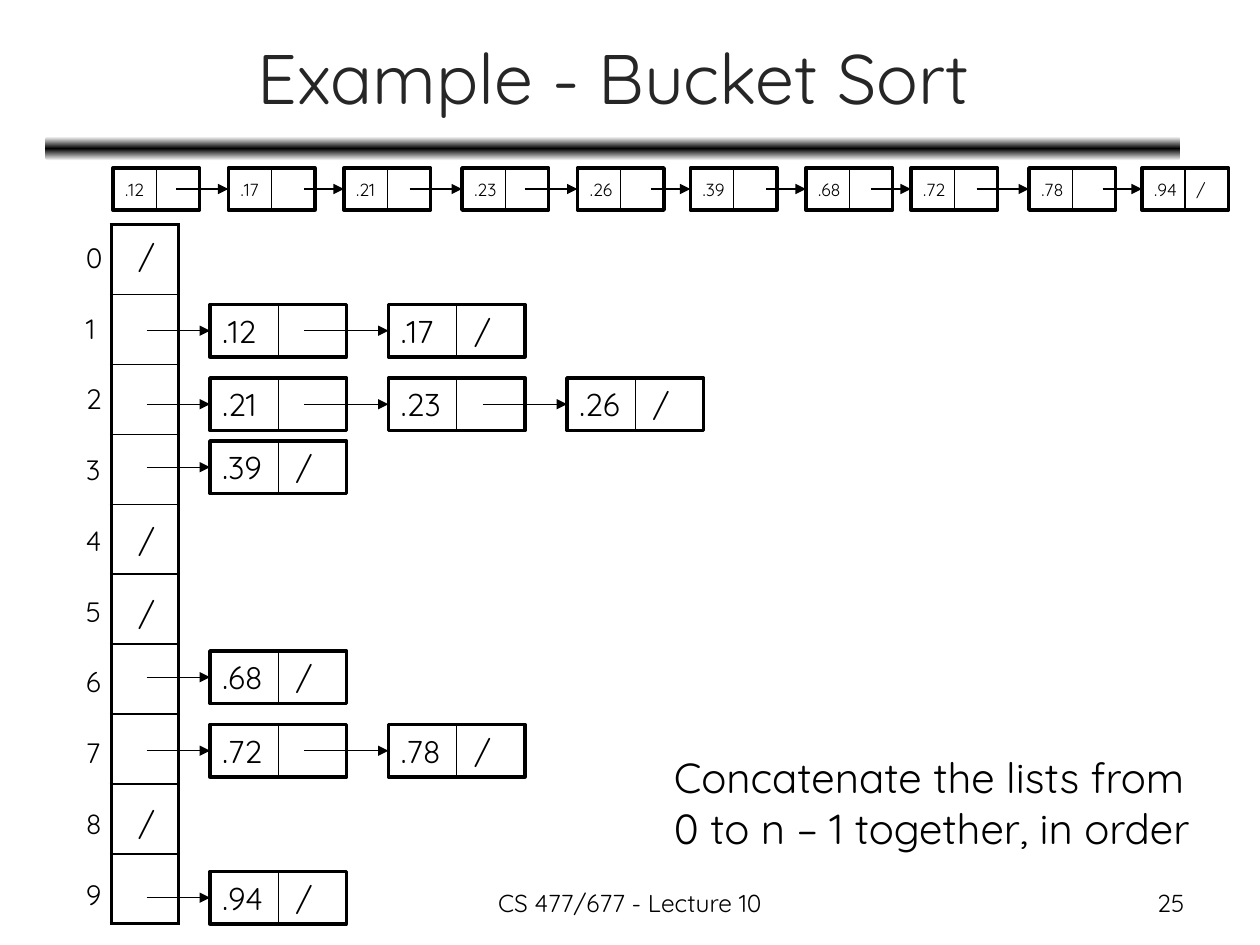
from copy import deepcopy
from dataclasses import dataclass

import lxml.etree
import pptx
import pptx.dml.color
import pptx.enum.shapes
import pptx.enum.text
import pptx.oxml.ns
import pptx.util

qn = pptx.oxml.ns.qn
Pt = pptx.util.Pt
Align = pptx.enum.text.PP_ALIGN
Anchor = pptx.enum.text.MSO_ANCHOR
Shape = pptx.enum.shapes.MSO_SHAPE


@dataclass(frozen=True)
class Theme:
    font: str = "Quicksand"
    ink: str = "000000"
    paper: str = "FFFFFF"
    heading: str = "262626"
    title: int = 40
    remark: int = 24
    key: int = 18
    index: int = 16
    footer: int = 14
    small_key: int = 10
    thin: float = 0.75
    cell: float = 1
    box: float = 2
    frame: float = 2.25


@dataclass(frozen=True)
class NodeStyle:
    """Size of a list node in grid units; nil is where its end mark starts."""
    width: float
    height: float
    size: int
    nil: float


@dataclass(frozen=True)
class Link:
    """A node of the joined list: its column and where its pointer starts."""
    key: str
    col: float
    pointer: float | None = None


@dataclass(frozen=True)
class Bucket:
    index: int
    row: float
    keys: tuple[str, ...]


THEME = Theme()
COLS, ROWS = 120, 90  # twelve grid units to the inch
BIG = NodeStyle(13, 5, THEME.key, 7)
SMALL = NodeStyle(8.25, 4, THEME.small_key, 4)

JOINED_ROW = 16
JOINED = (
    Link(".12", 10.75, 16.75), Link(".17", 21.75, 29), Link(".21", 32.75, 39),
    Link(".23", 44, 50), Link(".26", 55, 62), Link(".39", 65.75, 73),
    Link(".68", 76.75, 83), Link(".72", 86.75, 93), Link(".78", 98, 105),
    Link(".94", 108.75),
)
BUCKETS = (
    Bucket(1, 29, (".12", ".17")), Bucket(2, 36, (".21", ".23", ".26")),
    Bucket(3, 42, (".39",)), Bucket(6, 62, (".68",)),
    Bucket(7, 69, (".72", ".78")), Bucket(9, 83, (".94",)),
)
EMPTY_ROWS = (22, 49, 56, 76)
BUCKET_COUNT = 10
ARRAY_LEFT, ARRAY_TOP, ARRAY_WIDTH, ARRAY_HEIGHT = 10.6, 21.4, 6.4, 66.6
ROW_HEIGHT = ARRAY_HEIGHT / BUCKET_COUNT
FIRST_NODE, NODE_STEP, POINTER, BUCKET_POINTER = 20, 17, 9, 14

prs = pptx.Presentation()
prs.slide_width, prs.slide_height = pptx.util.Inches(10), pptx.util.Inches(7.5)
slide = prs.slides.add_slide(prs.slide_layouts[5])


def units(*lengths: float) -> list[int]:
    return [round(length * prs.slide_width / COLS) for length in lengths]


def colour(code: str) -> pptx.dml.color.RGBColor:
    return pptx.dml.color.RGBColor.from_string(code)


def write(frame, lines: tuple[str, ...], size: int, align=Align.LEFT,
          ink: str = THEME.ink, anchor=Anchor.TOP) -> None:
    frame.word_wrap = True
    frame.vertical_anchor = anchor
    frame.text = "\n".join(lines)
    for paragraph in frame.paragraphs:
        paragraph.alignment = align
        paragraph.font.name = THEME.font
        paragraph.font.size = Pt(size)
        paragraph.font.color.rgb = colour(ink)


def label(left: float, top: float, width: float, height: float, size: int,
          *lines: str, align=Align.LEFT) -> None:
    box = slide.shapes.add_textbox(*units(left, top, width, height))
    write(box.text_frame, lines, size, align)


def line(x1: float, y1: float, x2: float, y2: float, arrow: bool = False) -> None:
    connector = slide.shapes.add_connector(
        pptx.enum.shapes.MSO_CONNECTOR.STRAIGHT, *units(x1, y1, x2, y2))
    connector.line.color.rgb = colour(THEME.ink)
    connector.line.width = Pt(THEME.thin)
    if arrow:
        lxml.etree.SubElement(connector.line._get_or_add_ln(), qn("a:tailEnd"),
                              type="triangle")
    lxml.etree.SubElement(connector._element.spPr, qn("a:effectLst"))


def node(key: str, col: float, row: float, style: NodeStyle, last: bool) -> None:
    box = slide.shapes.add_shape(
        Shape.RECTANGLE, *units(col, row, style.width, style.height))
    box.shadow.inherit = False
    box.fill.background()
    box.line.color.rgb = colour(THEME.ink)
    box.line.width = Pt(THEME.box)
    write(box.text_frame, (key + "\t/" if last else key,), style.size,
          anchor=Anchor.MIDDLE)
    if last:
        properties = box.text_frame.paragraphs[0]._p.get_or_add_pPr()
        stops = lxml.etree.Element(qn("a:tabLst"))
        lxml.etree.SubElement(stops, qn("a:tab"), pos=str(units(style.nil)[0]),
                              algn="l")
        properties.insert(0, stops)
    middle = col + style.width / 2
    line(middle, row, middle, row + style.height)


def header_rule() -> None:
    """Draw the bar under the title, fading out above and below."""
    bar = slide.shapes.add_shape(Shape.ROUNDED_RECTANGLE, *units(4.3, 13, 108.1, 2.3))
    bar.shadow.inherit = False
    bar.line.fill.background()
    bar.fill.gradient()
    bar.fill.gradient_angle = 90
    edge, core = bar.fill.gradient_stops
    edge.color.rgb, core.color.rgb = colour(THEME.paper), colour(THEME.ink)
    core.position = 0.5
    stops = bar._element.spPr.find(".//" + qn("a:gsLst"))
    far_edge = deepcopy(stops[0])
    far_edge.set("pos", "100000")
    stops.append(far_edge)


def border(cell, side: str, width: float) -> None:
    edge = lxml.etree.Element(qn("a:ln" + side), w=str(Pt(width)))
    fill = lxml.etree.SubElement(edge, qn("a:solidFill"))
    lxml.etree.SubElement(fill, qn("a:srgbClr"), val=THEME.ink)
    cell._tc.get_or_add_tcPr().append(edge)


def bucket_array() -> None:
    table = slide.shapes.add_table(
        BUCKET_COUNT, 1,
        *units(ARRAY_LEFT, ARRAY_TOP, ARRAY_WIDTH, ARRAY_HEIGHT)).table
    table.first_row = table.horz_banding = False
    for i in range(BUCKET_COUNT):
        cell = table.cell(i, 0)
        border(cell, "L", THEME.frame)
        border(cell, "R", THEME.frame)
        border(cell, "T", THEME.frame if i == 0 else THEME.cell)
        border(cell, "B", THEME.frame if i == BUCKET_COUNT - 1 else THEME.cell)
        cell.fill.background()
        label(7, 22.3 + i * 6.74, 3.8, 4.4, THEME.index, str(i))
    for row in EMPTY_ROWS:
        label(12, row, 3.7, 4.8, THEME.key, "/")


def bucket_list(bucket: Bucket) -> None:
    middle = bucket.row + BIG.height / 2
    start = BUCKET_POINTER
    for i, key in enumerate(bucket.keys):
        col = FIRST_NODE + i * NODE_STEP
        node(key, col, bucket.row, BIG, last=i == len(bucket.keys) - 1)
        line(start, middle, col, middle, arrow=True)
        start = col + POINTER


def joined_list() -> None:
    middle = JOINED_ROW + SMALL.height / 2
    for link in JOINED:
        node(link.key, link.col, JOINED_ROW, SMALL, last=link.pointer is None)
    for link, following in zip(JOINED, JOINED[1:]):
        line(link.pointer, middle, following.col, middle, arrow=True)


header_rule()
title = slide.shapes.title
title.left, title.top, title.width, title.height = units(4.4, 1.3, 108, 11.9)
write(title.text_frame, ("Example - Bucket Sort",), THEME.title, Align.CENTER,
      THEME.heading, Anchor.MIDDLE)
bucket_array()
for bucket in BUCKETS:
    bucket_list(bucket)
joined_list()
label(63, 71, 55.3, 10.9, THEME.remark,
      "Concatenate the lists from", "0 to n – 1 together, in order")
label(41, 84, 38, 4.2, THEME.footer, "CS 477/677 - Lecture 10", align=Align.CENTER)
label(86, 84, 28, 4.2, THEME.footer, "25", align=Align.RIGHT)
prs.save("out.pptx")
